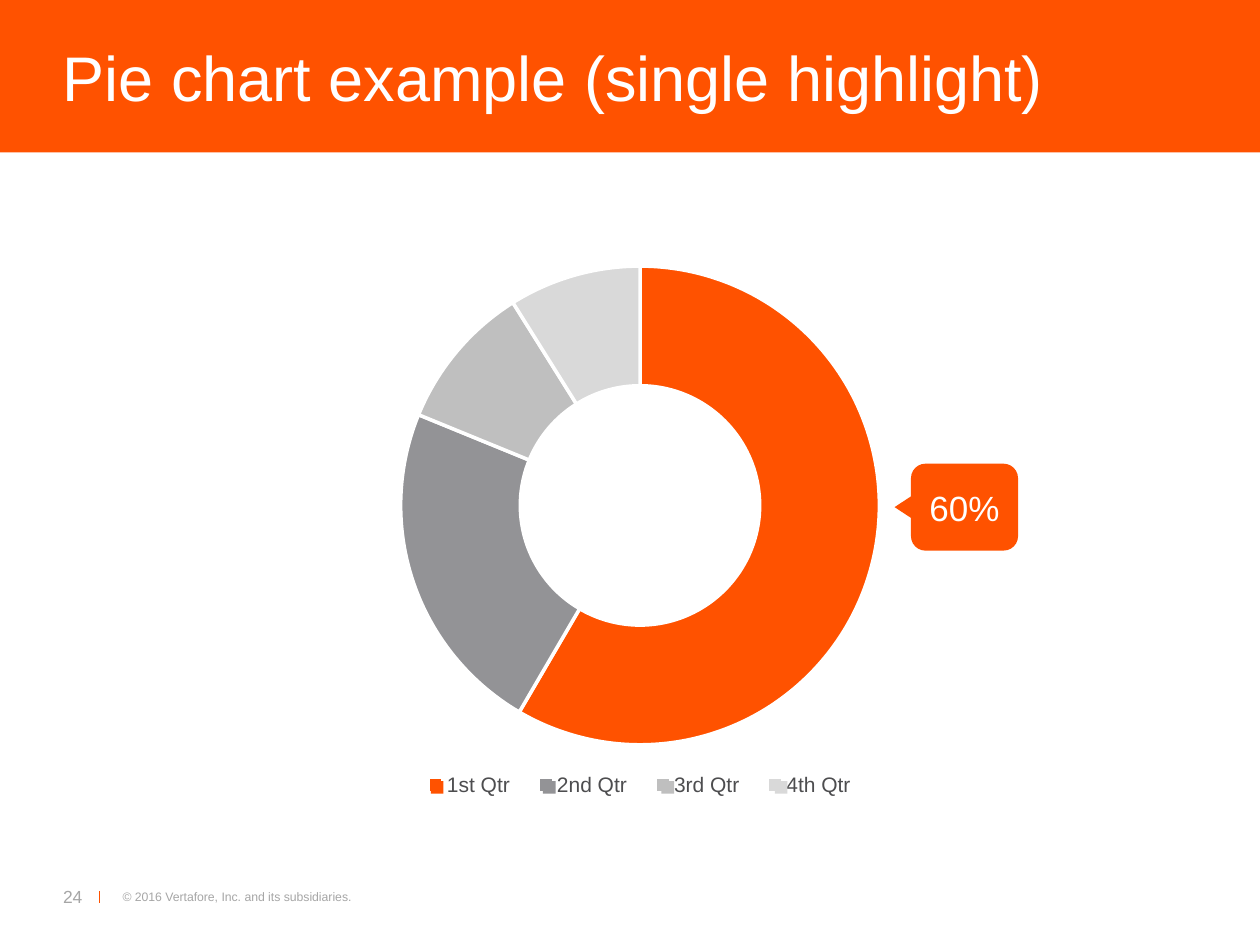
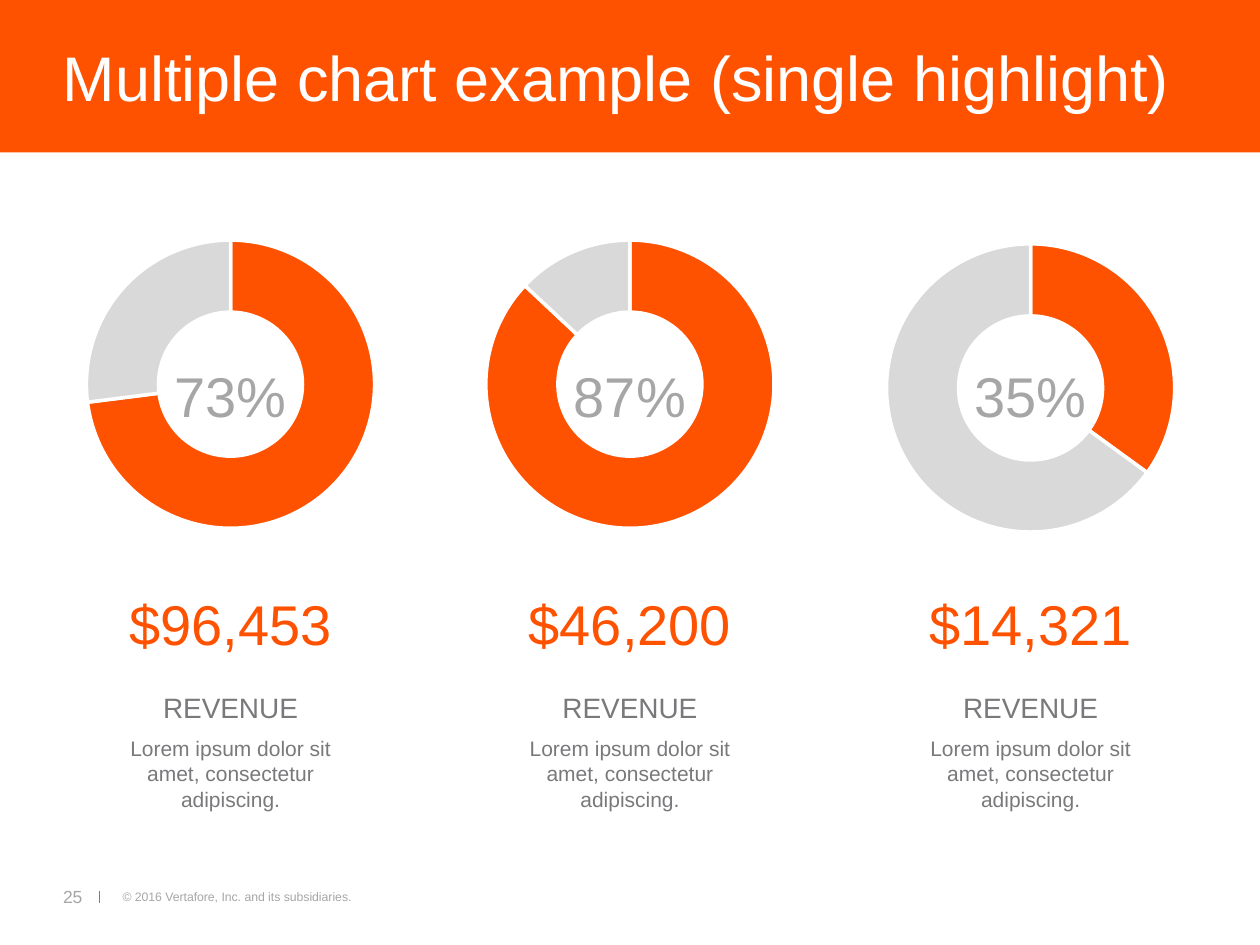
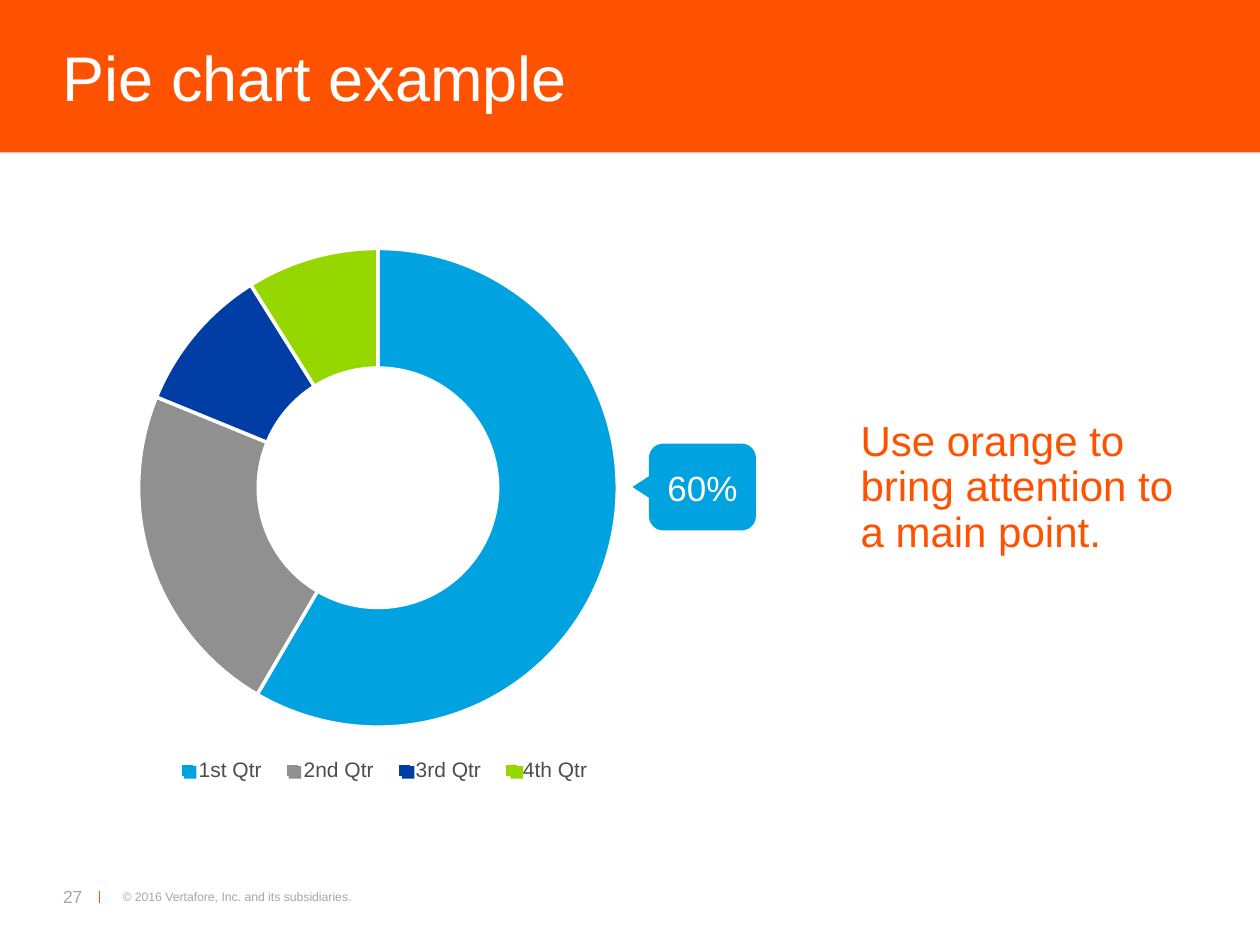
from lxml import etree
from pptx import Presentation
from pptx.chart.data import CategoryChartData
from pptx.dml.color import RGBColor
from pptx.enum.chart import XL_CHART_TYPE, XL_LEGEND_POSITION
from pptx.enum.shapes import MSO_CONNECTOR, MSO_SHAPE
from pptx.enum.text import MSO_ANCHOR, PP_ALIGN
from pptx.oxml import parse_xml
from pptx.oxml.ns import nsdecls, qn
from pptx.util import Inches, Pt

COLORS = {
    "orange": "FF5200", "white": "FFFFFF", "footer": "A6A6A6", "label": "79797C",
    "legend": "4D4D4F", "slate": "939396", "silver": "BFBFBF", "pale": "D9D9D9",
    "sky": "00A3E0", "gray": "909090", "navy": "003DA5", "lime": "96D700",
}
FONT = "Arial"


def add_text(page, text, left, top, width, height, size, color,
             align=PP_ALIGN.LEFT, anchor=MSO_ANCHOR.TOP, wrap=True):
    box = page.shapes.add_textbox(Inches(left), Inches(top), Inches(width), Inches(height))
    frame = box.text_frame
    frame.margin_left = frame.margin_right = frame.margin_top = frame.margin_bottom = 0
    frame.word_wrap = wrap
    frame.vertical_anchor = anchor
    frame.text = text
    para = frame.paragraphs[0]
    para.alignment = align
    para.font.name = FONT
    para.font.size = Pt(size)
    para.font.color.rgb = RGBColor.from_string(COLORS[color])
    return para


def add_filled(page, kind, left, top, width, height, color):
    """Add a preset shape with a solid fill, no outline and no shadow."""
    shape = page.shapes.add_shape(kind, Inches(left), Inches(top), Inches(width), Inches(height))
    shape.shadow.inherit = False
    shape.fill.solid()
    shape.fill.fore_color.rgb = RGBColor.from_string(COLORS[color])
    shape.line.fill.background()
    return shape


deck = Presentation()
deck.slide_width = Inches(10)
deck.slide_height = Inches(7.5)

# Title band and footer
pages = []
for title, number in [
    ("Pie chart example (single highlight)", "24"),
    ("Multiple chart example (single highlight)", "25"),
    ("Pie chart example", "27"),
]:
    page = deck.slides.add_slide(deck.slide_layouts[6])
    pages.append(page)
    add_filled(page, MSO_SHAPE.RECTANGLE, 0, 0, 10, 1.21, "orange")
    add_text(page, title, 0.5, 0.13, 9, 0.95, 36, "white", anchor=MSO_ANCHOR.MIDDLE)
    add_text(page, "© 2016 Vertafore, Inc. and its subsidiaries.",
             0.94, 7.06, 1.85, 0.12, 7, "footer", PP_ALIGN.RIGHT, wrap=False)
    add_text(page, number, 0.5, 7.03, 0.62, 0.17, 10, "footer")
    divider = page.shapes.add_connector(
        MSO_CONNECTOR.STRAIGHT, Inches(0.79), Inches(7.07), Inches(0.79), Inches(7.17))
    divider.line.color.rgb = RGBColor.from_string(COLORS["orange"])
    divider.line.width = Pt(1)
    etree.SubElement(divider._element.spPr, qn("a:effectLst"))
quarter_page, revenue_page, color_page = pages

# Doughnut charts: page, place, categories, values, point colors, hole, ring and legend layout
quarters = ["1st Qtr", "2nd Qtr", "3rd Qtr", "4th Qtr"]
quarter_values = [59, 23, 10, 9]
quarter_colors = ["orange", "slate", "silver", "pale"]
bright_colors = ["sky", "gray", "navy", "lime"]
quarter_ring = (0.12, 0.03, 0.76, 0.86)
revenue_ring = (0.06, 0.06, 0.88, 0.88)
revenues = [  # center, chart top, share, amount
    (1.83, 1.75, 73, "$96,453"),
    (5, 1.75, 87, "$46,200"),
    (8.18, 1.78, 35, "$14,321"),
]
donuts = [
    (quarter_page, (2.58, 1.97, 5, 4.44), quarters, quarter_values, quarter_colors,
     65, quarter_ring, (0.13, 0.92, 0.74, 0.08)),
    (color_page, (0.5, 1.83, 5, 4.44), quarters, quarter_values, bright_colors,
     65, quarter_ring, (0.16, 0.93, 0.7, 0.08)),
]
for center, top, share, amount in revenues:
    donuts.append((revenue_page, (center - 1.3, top, 2.6, 2.6), ["1", "2"],
                   [share, 100 - share], ["orange", "pale"], 70, revenue_ring, None))

for page, place, categories, values, colors, hole, ring, legend in donuts:
    data = CategoryChartData()
    data.categories = categories
    data.add_series("Series 1", values)
    chart = page.shapes.add_chart(
        XL_CHART_TYPE.DOUGHNUT, *[Inches(length) for length in place], data).chart
    chart.has_title = False
    chart.font.name = FONT
    chart.font.size = Pt(18)
    chart.font.color.rgb = RGBColor.from_string(COLORS["legend"])
    chart.has_legend = legend is not None
    plot = chart.plots[0]
    plot.vary_by_categories = True
    plot._element.find(qn("c:holeSize")).set("val", str(hole))
    for index, color in enumerate(colors):
        point = plot.series[0].points[index].format
        point.fill.solid()
        point.fill.fore_color.rgb = RGBColor.from_string(COLORS[color])
        point.line.color.rgb = RGBColor.from_string(COLORS["white"])
        point.line.width = Pt(2)

    plot_area = chart._chartSpace.chart.plotArea
    for old_layout in plot_area.findall(qn("c:layout")):
        plot_area.remove(old_layout)
    layouts = [(plot_area, 0, ring, '<c:layoutTarget val="inner"/>')]
    if legend:
        chart.legend.position = XL_LEGEND_POSITION.BOTTOM
        chart.legend.include_in_layout = False
        chart.legend.font.name = FONT
        chart.legend.font.size = Pt(12)
        chart.legend.font.color.rgb = RGBColor.from_string(COLORS["legend"])
        for old_layout in chart.legend._element.findall(qn("c:layout")):
            chart.legend._element.remove(old_layout)
        layouts.append((chart.legend._element, 1, legend, ""))
    for parent, position, (x, y, w, h), target in layouts:
        parent.insert(position, parse_xml(
            f'<c:layout {nsdecls("c")}><c:manualLayout>{target}'
            f'<c:xMode val="edge"/><c:yMode val="edge"/><c:x val="{x}"/><c:y val="{y}"/>'
            f'<c:w val="{w}"/><c:h val="{h}"/></c:manualLayout></c:layout>'))

# Legend keys and the callout beside each quarter chart
for page, colors, key_lefts, key_top, callout_left, callout_top in [
    (quarter_page, quarter_colors, [3.42, 4.31, 5.25, 6.15], 6.2, 7.23, 3.68),
    (color_page, bright_colors, [1.46, 2.29, 3.19, 4.05], 6.08, 5.15, 3.52),
]:
    for key_left, color in zip(key_lefts, colors):
        add_filled(page, MSO_SHAPE.RECTANGLE, key_left, key_top, 0.1, 0.1, color)
    callout = add_filled(page, MSO_SHAPE.ROUNDED_RECTANGLE,
                         callout_left, callout_top, 0.85, 0.69, colors[0])
    frame = callout.text_frame
    frame.margin_left = frame.margin_right = frame.margin_top = frame.margin_bottom = 0
    frame.vertical_anchor = MSO_ANCHOR.MIDDLE
    frame.text = "60%"
    para = frame.paragraphs[0]
    para.alignment = PP_ALIGN.CENTER
    para.font.name = FONT
    para.font.size = Pt(20)
    para.font.color.rgb = RGBColor.from_string(COLORS["white"])
    pointer = add_filled(page, MSO_SHAPE.ISOSCELES_TRIANGLE,
                         callout_left - 0.15, callout_top + 0.28, 0.17, 0.13, colors[0])
    pointer.rotation = 270

# Revenue columns
for center, top, share, amount in revenues:
    for text, text_top, width, height, size, color in [
        (f"{share}%", 2.87, 1.1, 0.5, 32, "footer"),
        (amount, 4.68, 1.81, 0.57, 32, "orange"),
        ("REVENUE", 5.48, 1.3, 0.28, 16, "label"),
        ("Lorem ipsum dolor sit amet, consectetur adipiscing.", 5.84, 1.81, 0.8, 12, "label"),
    ]:
        add_text(revenue_page, text, center - width / 2, text_top, width, height,
                 size, color, PP_ALIGN.CENTER)

advice = add_text(color_page, "Use orange to bring attention to a main point.",
                  6.83, 3.33, 2.67, 1.09, 24, "orange", anchor=MSO_ANCHOR.MIDDLE)
advice.line_spacing = 0.9

deck.save("out.pptx")
